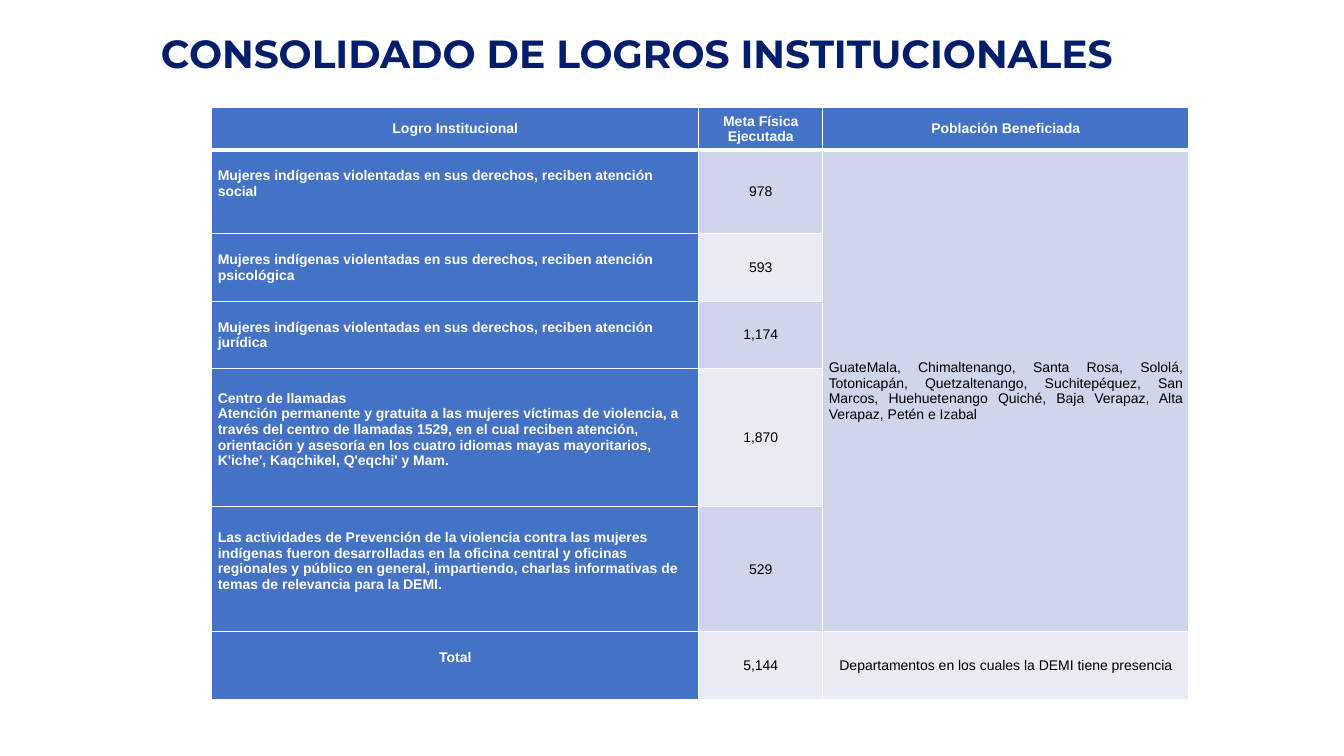
from lxml import etree
from pptx import Presentation
from pptx.dml.color import RGBColor
from pptx.enum.text import MSO_ANCHOR, PP_ALIGN
from pptx.oxml.ns import qn
from pptx.util import Inches, Pt

LEFT, CENTER, JUSTIFY = PP_ALIGN.LEFT, PP_ALIGN.CENTER, PP_ALIGN.JUSTIFY
MIDDLE = MSO_ANCHOR.MIDDLE
NAVY, BLUE, WHITE, BLACK = "001E6C", "4472C4", "FFFFFF", "000000"
BANDS = ["E9EBF5", "CFD5EA"]
LINE_HEIGHT = 0.16


def style_text(frame, font_name, size, color, bold, alignment):
    for paragraph in frame.paragraphs:
        paragraph.alignment = alignment
        for run in paragraph.runs:
            run.font.name = font_name
            run.font.size = Pt(size)
            run.font.bold = bold
            run.font.color.rgb = RGBColor.from_string(color)


def add_borders(cell, top, bottom):
    """Draw white borders, with the top and bottom widths in points."""
    properties = cell._tc.get_or_add_tcPr()
    for side, width in (("L", 1), ("R", 1), ("T", top), ("B", bottom)):
        line = etree.SubElement(properties, qn(f"a:ln{side}"), w=str(Pt(width)))
        fill = etree.SubElement(line, qn("a:solidFill"))
        etree.SubElement(fill, qn("a:srgbClr"), val=WHITE)


prs = Presentation()
prs.slide_width, prs.slide_height = Inches(13.33), Inches(7.5)
slide = prs.slides.add_slide(prs.slide_layouts[5])

title = slide.shapes.title
title.left, title.top = Inches(0.99), Inches(0.24)
title.width, title.height = Inches(10.65), Inches(0.57)
title.text_frame.text = "CONSOLIDADO DE LOGROS INSTITUCIONALES"
title.text_frame.vertical_anchor = MIDDLE
style_text(title.text_frame, "Montserrat", 28, NAVY, True, CENTER)

departments = (
    "GuateMala, Chimaltenango, Santa Rosa, Sololá, Totonicapán, Quetzaltenango, "
    "Suchitepéquez, San Marcos, Huehuetenango Quiché, Baja Verapaz, Alta Verapaz, "
    "Petén e Izabal"
)
call_center = (
    "Centro de llamadas\n"
    "Atención permanente y gratuita a las mujeres víctimas de violencia, a través "
    "del centro de llamadas 1529, en el cual reciben atención, orientación y asesoría "
    "en los cuatro idiomas mayas mayoritarios, K'iche', Kaqchikel, Q'eqchi' y Mam."
)
prevention = (
    "Las actividades de Prevención de la violencia contra las mujeres indígenas "
    "fueron desarrolladas en la oficina central y oficinas regionales y público en "
    "general, impartiendo, charlas informativas de temas de relevancia para la DEMI."
)
care = "Mujeres indígenas violentadas en sus derechos, reciben atención "
achievements = [
    ("Logro Institucional", "Meta Física Ejecutada", "Población Beneficiada"),
    (care + "social", "978", departments),
    (care + "psicológica", "593", ""),
    (care + "jurídica", "1,174", ""),
    (call_center, "1,870", ""),
    (prevention, "529", ""),
    ("Total", "5,144", "Departamentos en los cuales la DEMI tiene presencia"),
]
column_widths = [4.83, 1.23, 3.63]
row_heights = [0.42, 0.83, 0.67, 0.67, 1.37, 1.24, 0.67]
raised_rows = {1, 4, 5, 6}  # rows whose achievement sits half a line above the middle
total_row = len(achievements) - 1

table = slide.shapes.add_table(
    len(row_heights), len(column_widths), Inches(2.1), Inches(1.07),
    Inches(sum(column_widths)), Inches(sum(row_heights)),
).table
for column, width in zip(table.columns, column_widths):
    column.width = Inches(width)
for row, height in zip(table.rows, row_heights):
    row.height = Inches(height)
table.cell(1, 2).merge(table.cell(total_row - 1, 2))

for r, achievement in enumerate(achievements):
    for c, content in enumerate(achievement):
        cell = table.cell(r, c)
        heading = r == 0 or c == 0
        add_borders(cell, 3 if r == 1 else 1, 3 if r == 0 else 1)
        cell.fill.solid()
        cell.fill.fore_color.rgb = RGBColor.from_string(BLUE if heading else BANDS[r % 2])
        cell.vertical_anchor = MIDDLE
        cell.margin_left = cell.margin_right = Inches(0.06)
        cell.margin_top = 0
        cell.margin_bottom = Inches(LINE_HEIGHT if c == 0 and r in raised_rows else 0)
        if content:
            cell.text_frame.text = content
        if c == 0 and 0 < r < total_row:
            alignment = LEFT
        else:
            alignment = JUSTIFY if content == departments else CENTER
        style_text(cell.text_frame, "Arial", 10, WHITE if heading else BLACK,
                   heading, alignment)

prs.save("out.pptx")
